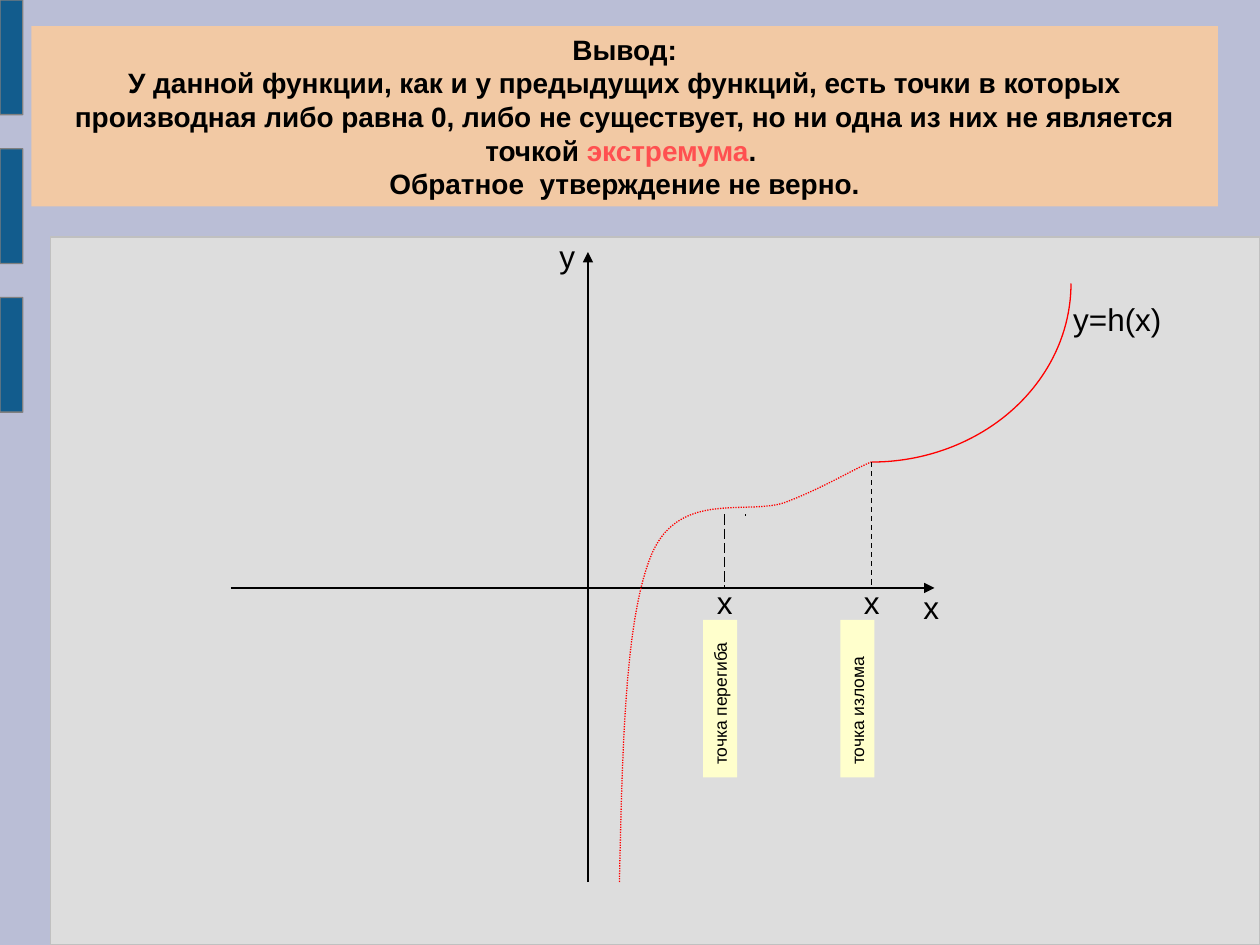
from lxml import etree
from pptx import Presentation
from pptx.dml.color import RGBColor
from pptx.enum.dml import MSO_LINE
from pptx.enum.shapes import MSO_CONNECTOR, MSO_SHAPE
from pptx.enum.text import MSO_ANCHOR, PP_ALIGN
from pptx.oxml.ns import qn
from pptx.util import Pt

COLORS = {
    "background": "BABED6", "panel": "DDDDDD", "panel_edge": "C0C0C0",
    "tab": "125C8D", "tab_edge": "808080", "conclusion": "FFCC99",
    "accent": "FF5050", "curve": "FF0000", "tag": "FFFFCC", "ink": "000000",
}
FONT = "Arial"
# Control points of the curve up to x2, measured from the origin, y downwards
CURVE_START = (18, 168)
CURVE_PARTS = [
    ((19.7, 91.7), (21.1, 15.4), (37, -20.6)),
    ((53.5, -56.6), (93.1, -40.8), (114, -49.4)),
    ((134.9, -57.4), (152.2, -68.2), (162, -72)),
]


def rgb(name):
    return RGBColor.from_string(COLORS[name])


def style_line(item, color, dash=None):
    item.line.color.rgb = rgb(color)
    item.line.width = Pt(0.75)
    if dash:
        item.line.dash_style = dash


def add_block(slide, kind, box, fill, edge=None):
    block = slide.shapes.add_shape(kind, *map(Pt, box))
    block.shadow.inherit = False
    block.fill.solid()
    block.fill.fore_color.rgb = rgb(fill)
    if edge:
        style_line(block, edge)
    else:
        block.line.fill.background()
    return block


def add_line(slide, start, end, dash=None, arrow=False):
    line = slide.shapes.add_connector(MSO_CONNECTOR.STRAIGHT, *map(Pt, start + end))
    style_line(line, "ink", dash)
    if arrow:
        etree.SubElement(line.line._get_or_add_ln(), qn("a:tailEnd"), type="triangle")
    etree.SubElement(line._element.spPr, qn("a:effectLst"))


def add_run(paragraph, text, size, color="ink", bold=False):
    run = paragraph.add_run()
    run.text = text
    run.font.name = FONT
    run.font.size = Pt(size)
    run.font.bold = bold
    run.font.color.rgb = rgb(color)
    return run


def add_label(slide, box, text, index=None):
    label = slide.shapes.add_textbox(*map(Pt, box))
    label.text_frame.word_wrap = False
    paragraph = label.text_frame.paragraphs[0]
    add_run(paragraph, text, 18)
    if index:
        subscript = add_run(paragraph, index, 18)
        subscript.font._element.set("baseline", "-25000")


def add_tag(slide, center, text):
    width, height = 90, 19.5
    box = (center[0] - width / 2, center[1] - height / 2, width, height)
    tag = add_block(slide, MSO_SHAPE.RECTANGLE, box, "tag")
    tag.rotation = 270
    frame = tag.text_frame
    frame.word_wrap = True
    frame.vertical_anchor = MSO_ANCHOR.TOP
    frame.paragraphs[0].alignment = PP_ALIGN.LEFT
    add_run(frame.paragraphs[0], text, 10)


def bezier_points(start, parts, steps=40):
    points = [start]
    for first, second, end in parts:
        for step in range(1, steps + 1):
            t = step / steps
            u = 1 - t
            points.append(tuple(
                u**3 * a + 3 * u * u * t * b + 3 * u * t * t * c + t**3 * d
                for a, b, c, d in zip(start, first, second, end)))
        start = end
    return points


def build_side_tabs(slide, left, top, width, height):
    tab_height = 65.5
    gap = (height - 3 * tab_height) / 2
    for row in range(3):
        box = (left, top + row * (tab_height + gap), width, tab_height)
        tab = add_block(slide, MSO_SHAPE.ROUNDED_RECTANGLE, box, "tab", "tab_edge")
        tab.adjustments[0] = 0.01


def build_conclusion(slide, left, top, width, height):
    panel = add_block(slide, MSO_SHAPE.RECTANGLE, (left, top, width, height), "conclusion")
    fill_color = panel._element.spPr.find(qn("a:solidFill"))[0]
    etree.SubElement(fill_color, qn("a:alpha"), val="82000")
    frame = panel.text_frame
    frame.word_wrap = True
    frame.vertical_anchor = MSO_ANCHOR.MIDDLE
    paragraph = frame.paragraphs[0]
    paragraph.alignment = PP_ALIGN.CENTER
    add_run(paragraph, "Вывод:", 16, bold=True)
    paragraph.add_line_break()
    add_run(paragraph, "У данной функции, как и у предыдущих функций, есть точки в которых "
            "производная либо равна 0, либо не существует, но ни одна из них не "
            "является точкой ", 16, bold=True)
    add_run(paragraph, "экстремума", 16, "accent", True)
    add_run(paragraph, ". ", 16, bold=True)
    paragraph.add_line_break()
    add_run(paragraph, "Обратное  утверждение не верно.", 16, bold=True)


def build_graph(slide, left, top, width, height):
    panel = add_block(slide, MSO_SHAPE.RECTANGLE, (left, top, width, height),
                      "panel", "panel_edge")
    origin_x, origin_y = left + 307.2, top + 200.6

    def at(x, y):
        return origin_x + x, origin_y + y

    # Axes
    add_line(slide, at(0, 168), at(0, -192), arrow=True)
    add_line(slide, at(-204, 0), at(198, 0), arrow=True)

    # Dotted curve up to the break point
    points = [tuple(map(Pt, at(*point)))
              for point in bezier_points(CURVE_START, CURVE_PARTS)]
    builder = slide.shapes.build_freeform(*points[0], scale=1.0)
    builder.add_line_segments(points[1:], close=False)
    curve = builder.convert_to_shape()

    # Solid quarter ellipse after the break point
    branch = slide.shapes.add_shape(
        MSO_SHAPE.ARC, *map(Pt, at(48, -276) + (228, 204)))
    branch.adjustments[0] = 0
    branch.adjustments[1] = 54  # 90 degrees
    for part, dash in ((curve, MSO_LINE.ROUND_DOT), (branch, None)):
        part.shadow.inherit = False
        part.fill.background()
        style_line(part, "curve", dash)

    # Critical points: foot, dash top, dash style, tag centre, tag
    add_line(slide, at(90, -42), at(90, -41.3))
    critical_points = [
        ("1", 78, -42, MSO_LINE.LONG_DASH, 75.5, "точка перегиба"),
        ("2", 162, -72, MSO_LINE.DASH, 154, "точка излома"),
    ]
    for index, foot, dash_top, dash, tag_x, tag_text in critical_points:
        add_line(slide, at(foot, dash_top), at(foot, 0), dash)
        add_label(slide, at(foot - 11.4, -6.2) + (28.8, 31.7), "х", index)
        add_tag(slide, at(tag_x, 63.2), tag_text)

    # Names of the function and the axes
    for text, x, y, label_width in (
            ("y=h(x)", 270.2, -168.2, 64.8), ("x", 184.6, -3.4, 23), ("y", -23.5, -204.2, 23)):
        add_label(slide, at(x, y) + (label_width, 28.8), text)


def main():
    presentation = Presentation()
    presentation.slide_width, presentation.slide_height = Pt(720), Pt(540)
    slide = presentation.slides.add_slide(presentation.slide_layouts[6])
    slide.background.fill.solid()
    slide.background.fill.fore_color.rgb = rgb("background")
    build_graph(slide, 28.8, 135.4, 691.2, 404.6)
    build_side_tabs(slide, 0, 0, 13, 235.5)
    build_conclusion(slide, 18, 15, 678, 103)
    presentation.save("out.pptx")


if __name__ == "__main__":
    main()
